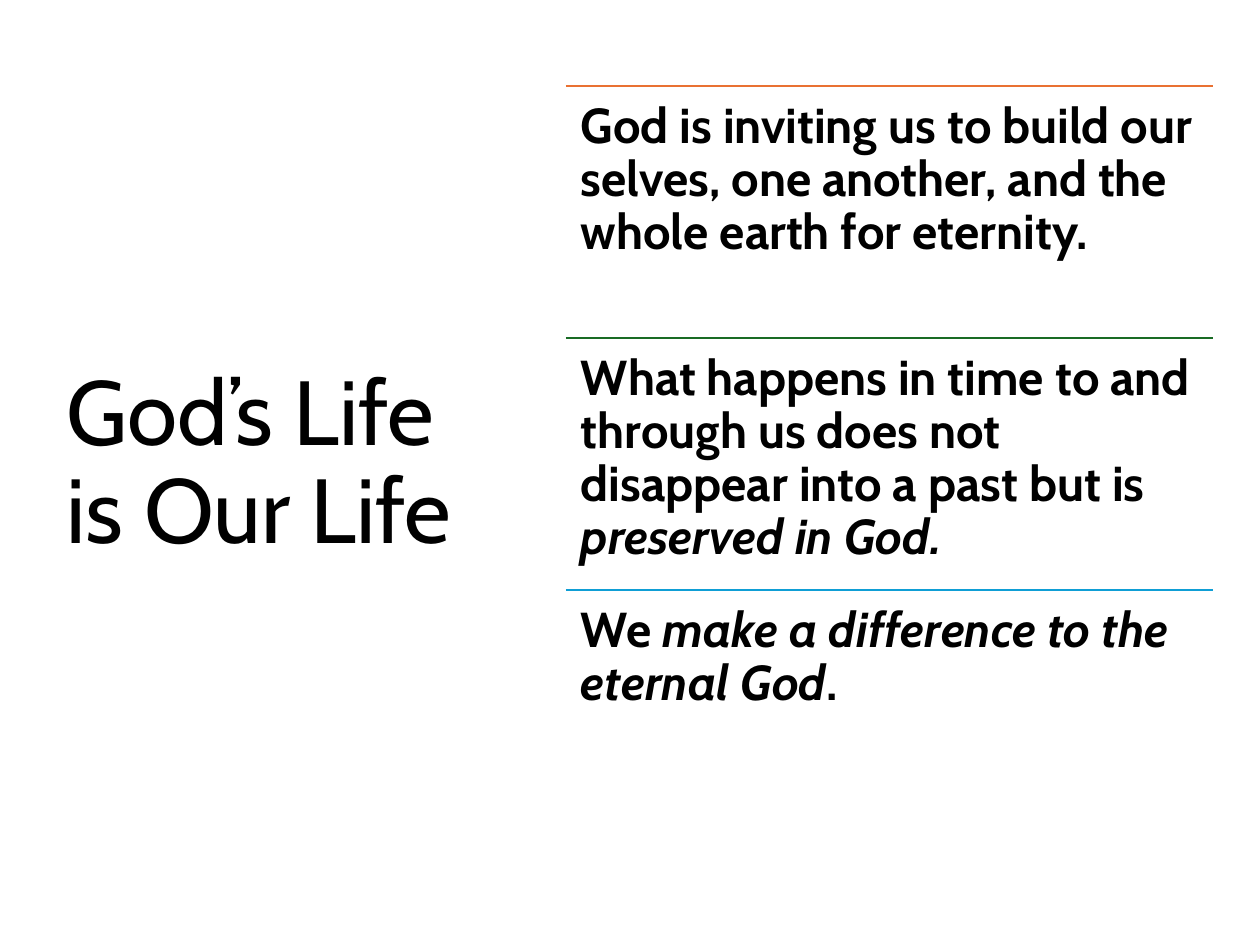
from lxml import etree
from pptx import Presentation
from pptx import util as u
from pptx.dml.color import RGBColor
from pptx.enum import shapes, text
from pptx.oxml.ns import qn

FONT = "Cabin"
BLACK = "000000"
LEFT, TOP, WIDTH, STEP = 566, 86, 647, 252
POINTS = [
    ("E97132", [("God is inviting us to build our selves, one another, "
                 "and the whole earth for eternity.", False)]),
    ("196B24", [("What happens in time to and through us does not "
                 "disappear into a past but is ", False),
                ("preserved in God.", True)]),
    ("0F9ED5", [("We ", False),
                ("make a difference to the eternal God", True),
                (".", False)]),
]


def px(length):
    """Turn pixels at 126 to the inch into EMU."""
    return u.Emu(round(length * 914400 / 126))


def color(hex_code):
    """Return the colour for a hex string."""
    return RGBColor.from_string(hex_code)


def add_run(paragraph, words, size, bold=False, italic=False):
    """Append one formatted run to a paragraph."""
    run = paragraph.add_run()
    run.text = words
    font = run.font
    font.name, font.size = FONT, u.Pt(size)
    font.bold, font.italic = bold, italic
    font.color.rgb = color(BLACK)


def set_title(slide, words):
    """Place and fill the title placeholder."""
    title = slide.shapes.title
    title.left, title.top, title.width, title.height = map(px, (54, 86, 426, 758))
    frame = title.text_frame
    frame.word_wrap = True
    frame.auto_size = text.MSO_AUTO_SIZE.NONE
    frame.vertical_anchor = text.MSO_ANCHOR.MIDDLE
    paragraph = frame.paragraphs[0]
    paragraph.alignment = text.PP_ALIGN.LEFT
    paragraph.line_spacing = 0.9
    add_run(paragraph, words, 52)


def add_rule(slide, top, hex_code):
    """Draw the coloured rule above a point."""
    rule = slide.shapes.add_connector(
        shapes.MSO_CONNECTOR.STRAIGHT,
        px(LEFT), px(top), px(LEFT + WIDTH), px(top))
    rule.line.color.rgb = color(hex_code)
    rule.line.width = u.Pt(1.5)
    etree.SubElement(rule._element.spPr, qn("a:effectLst"))


def add_point(slide, top, runs):
    """Write one point below its rule."""
    box = slide.shapes.add_textbox(px(LEFT), px(top), px(WIDTH), px(STEP))
    frame = box.text_frame
    frame.word_wrap = True
    frame.margin_left = frame.margin_right = px(15)
    frame.margin_top = frame.margin_bottom = px(15)
    paragraph = frame.paragraphs[0]
    paragraph.line_spacing = 0.9
    for words, italic in runs:
        add_run(paragraph, words, 28, bold=True, italic=italic)


def main():
    """Build and save the slide."""
    deck = Presentation()
    deck.slide_width, deck.slide_height = px(1260), px(945)
    slide = deck.slides.add_slide(deck.slide_layouts[5])
    set_title(slide, "God’s Life is Our Life")
    for row, (hex_code, runs) in enumerate(POINTS):
        top = TOP + row * STEP
        add_rule(slide, top, hex_code)
        add_point(slide, top, runs)
    deck.save("out.pptx")


if __name__ == "__main__":
    main()
